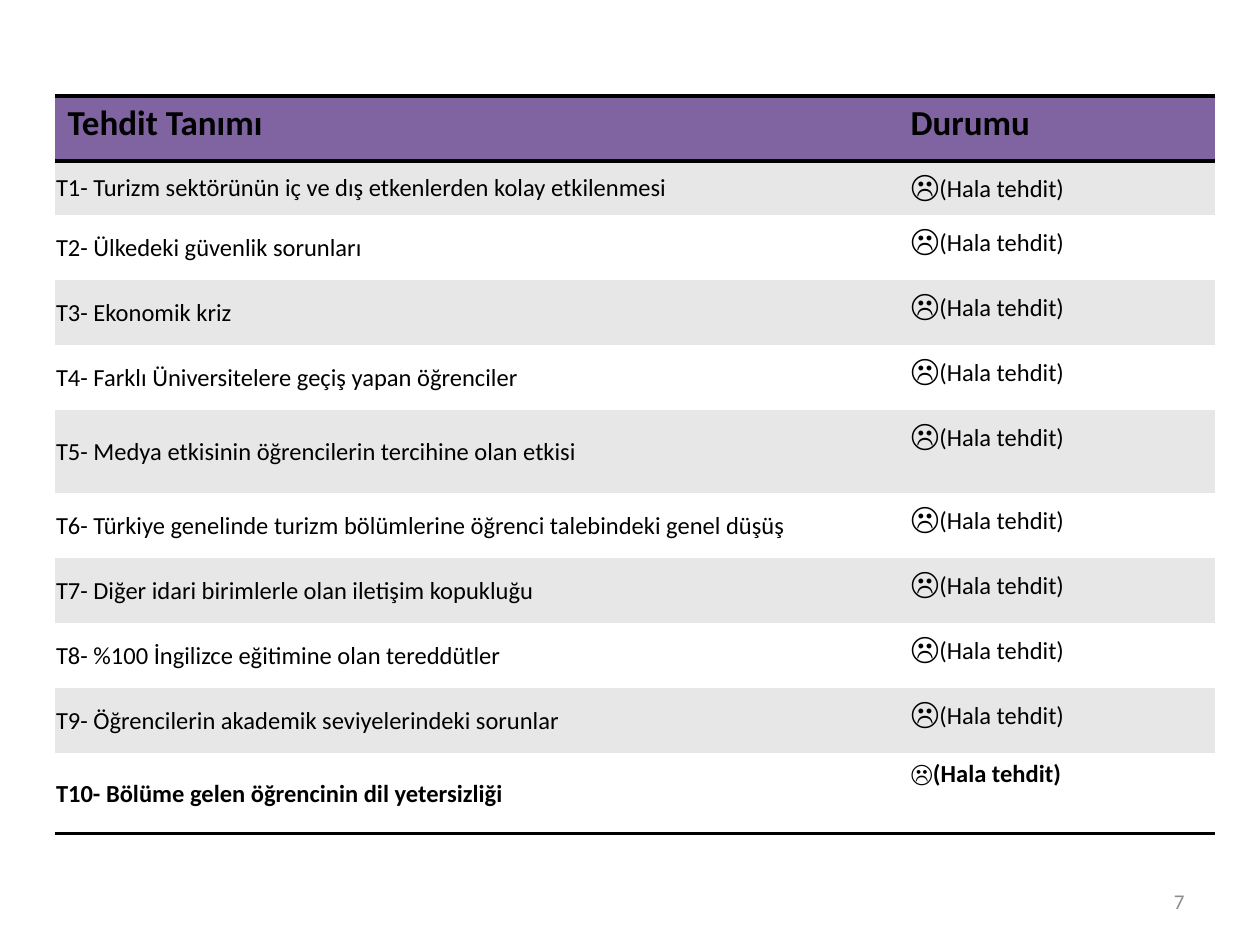
"""Build a slide with a table of threats and their current status."""
from dataclasses import dataclass

from lxml import etree
from pptx import Presentation
from pptx import util as u
from pptx.dml.color import RGBColor
from pptx.enum import text
from pptx.oxml.ns import qn

PX = u.Inches(1) / 126
FONT = "Calibri"
BLACK = RGBColor(0x00, 0x00, 0x00)
WHITE = RGBColor(0xFF, 0xFF, 0xFF)
PURPLE = RGBColor(0x80, 0x64, 0xA2)
BAND = RGBColor(0xE7, 0xE7, 0xE7)
GRAY = RGBColor(0x8C, 0x8C, 0x8C)
PLAIN_TABLE_STYLE = "{2D5ABB26-0587-4C30-8999-92F81FD0307C}"
COLUMN_WIDTHS = (843, 317)


@dataclass(frozen=True)
class Threat:
    description: str
    height: int = 65
    bold: bool = False
    icon_size: int = 18


THREATS = (
    Threat("T1- Turizm sektörünün iç ve dış etkenlerden kolay etkilenmesi", height=54),
    Threat("T2- Ülkedeki güvenlik sorunları"),
    Threat("T3- Ekonomik kriz"),
    Threat("T4- Farklı Üniversitelere geçiş yapan öğrenciler"),
    Threat("T5- Medya etkisinin öğrencilerin tercihine olan etkisi", height=83),
    Threat("T6- Türkiye genelinde turizm bölümlerine öğrenci talebindeki genel düşüş"),
    Threat("T7- Diğer idari birimlerle olan iletişim kopukluğu"),
    Threat("T8- %100 İngilizce eğitimine olan tereddütler"),
    Threat("T9- Öğrencilerin akademik seviyelerindeki sorunlar"),
    Threat("T10- Bölüme gelen öğrencinin dil yetersizliği", height=81, bold=True, icon_size=14),
)


def px(length: int) -> u.Emu:
    return u.Emu(round(length * PX))


def add_text(paragraph, content: str, *, size: int = 14, bold: bool = False,
             color: RGBColor = BLACK) -> None:
    run = paragraph.add_run()
    run.text = content
    run.font.name = FONT
    run.font.size = u.Pt(size)
    run.font.bold = bold
    run.font.color.rgb = color


def add_border(cell, side: str) -> None:
    properties = cell._tc.get_or_add_tcPr()
    line = etree.SubElement(properties, qn(f"a:ln{side}"), w=str(u.Pt(2)))
    fill = etree.SubElement(line, qn("a:solidFill"))
    etree.SubElement(fill, qn("a:srgbClr"), val=str(BLACK))


def style_cell(cell, fill: RGBColor, borders: str = "") -> None:
    for side in borders:
        add_border(cell, side)
    cell.fill.solid()
    cell.fill.fore_color.rgb = fill


def fill_header(table) -> None:
    for cell, title in zip(table.rows[0].cells, ("Tehdit Tanımı", "Durumu")):
        style_cell(cell, PURPLE, "TB")
        add_text(cell.text_frame.paragraphs[0], title, size=20, bold=True)


def fill_threat(table, number: int, threat: Threat) -> None:
    table.rows[number].height = px(threat.height)
    description, status = table.rows[number].cells
    for cell in (description, status):
        style_cell(cell, BAND if number % 2 else WHITE,
                   "B" if number == len(THREATS) else "")
    description.vertical_anchor = text.MSO_ANCHOR.MIDDLE
    description.margin_left = description.margin_right = description.margin_top = px(1)
    description.margin_bottom = 0
    add_text(description.text_frame.paragraphs[0], threat.description, bold=threat.bold)
    paragraph = status.text_frame.paragraphs[0]
    add_text(paragraph, "☹", size=threat.icon_size, bold=threat.bold)
    add_text(paragraph, "(Hala tehdit)", bold=threat.bold)


def add_threat_table(slide) -> None:
    header_height = 65
    height = header_height + sum(threat.height for threat in THREATS)
    table = slide.shapes.add_table(len(THREATS) + 1, len(COLUMN_WIDTHS), px(55), px(96),
                                   px(sum(COLUMN_WIDTHS)), px(height)).table
    table.first_row = table.horz_banding = False
    table._tbl.tblPr.find(qn("a:tableStyleId")).text = PLAIN_TABLE_STYLE
    for column, width in zip(table.columns, COLUMN_WIDTHS):
        column.width = px(width)
    table.rows[0].height = px(header_height)
    fill_header(table)
    for number, threat in enumerate(THREATS, start=1):
        fill_threat(table, number, threat)


def add_page_number(slide, number: int) -> None:
    frame = slide.shapes.add_textbox(px(903), px(876), px(294), px(50)).text_frame
    frame.word_wrap = True
    frame.vertical_anchor = text.MSO_ANCHOR.MIDDLE
    paragraph = frame.paragraphs[0]
    paragraph.alignment = text.PP_ALIGN.RIGHT
    add_text(paragraph, str(number), size=12, color=GRAY)


def main() -> None:
    presentation = Presentation()
    presentation.slide_width, presentation.slide_height = px(1260), px(945)
    slide = presentation.slides.add_slide(presentation.slide_layouts[6])
    add_page_number(slide, 7)
    add_threat_table(slide)
    presentation.save("out.pptx")


if __name__ == "__main__":
    main()
